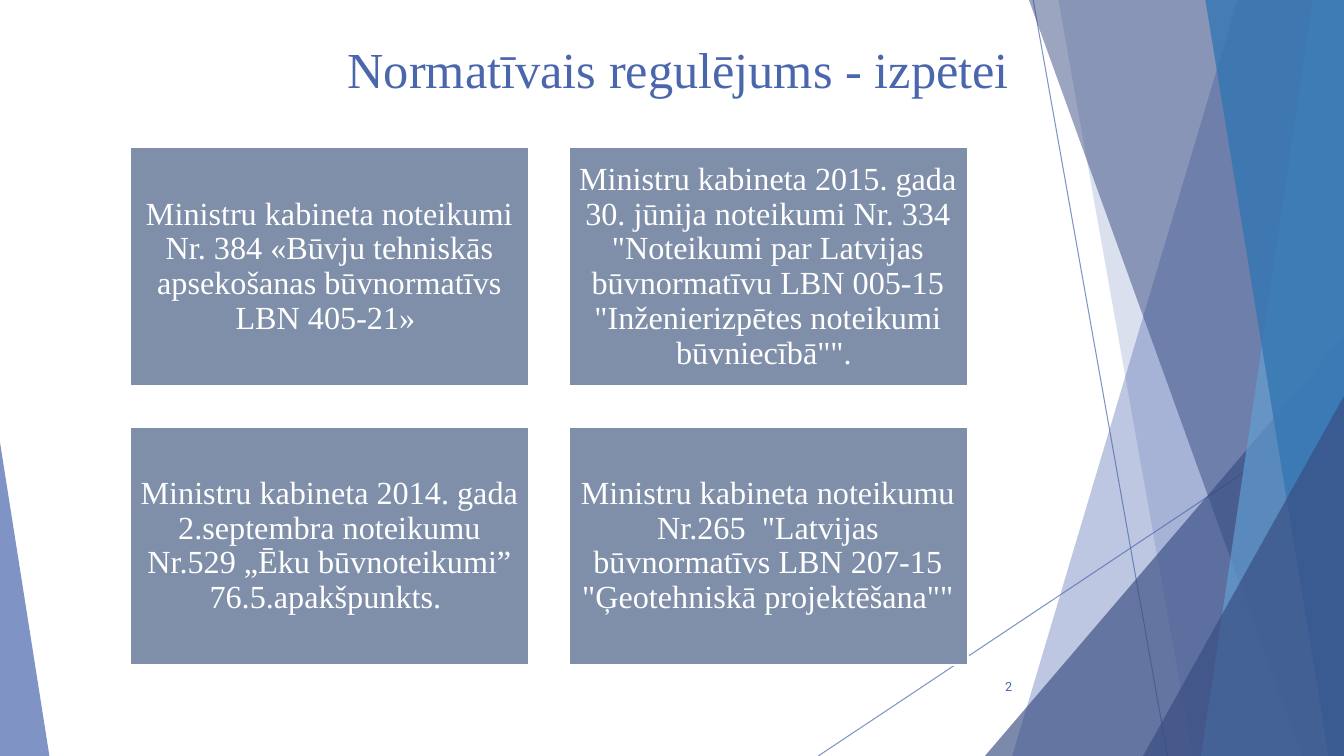
from dataclasses import dataclass
from typing import Any

from lxml import etree
from pptx import Presentation
from pptx import util as u
from pptx.dml import color
from pptx.enum import shapes, text
from pptx.oxml import ns

SLIDE_WIDTH, SLIDE_HEIGHT = 960, 540
COLORS = {
    "blue": "4A66AC",
    "navy": "384C81",
    "sky": "629DD1",
    "ocean": "3477B2",
    "slate": "7F8FA9",
    "white": "FFFFFF",
}
SERIF = "Times New Roman"


@dataclass(frozen=True)
class Ray:
    start: tuple[float, float]
    end: tuple[float, float]


@dataclass(frozen=True)
class Facet:
    top_x: float
    bottom_x: float
    color: str
    opacity: int


@dataclass(frozen=True)
class Triangle:
    left: float
    top: float
    width: float
    apex: float
    color: str
    opacity: int


@dataclass(frozen=True)
class Label:
    words: str
    box: tuple[float, float, float, float]
    size: float
    font: str
    color: str
    alignment: Any
    anchor: Any


RAYS = [Ray((738, 0), (834, 540)), Ray((960, 290), (584.5, 540))]

DECORATIONS = [
    Facet(884, 723, "blue", 36),
    Facet(756, 852, "blue", 20),
    Triangle(703.5, 240, 256.5, 1, "navy", 66),
    Facet(735, 929.5, "navy", 50),
    Facet(938, 858, "sky", 70),
    Facet(861, 949, "ocean", 80),
    Triangle(816.5, 283, 143.5, 1, "navy", 66),
    Triangle(0, 316, 35.3, 0, "blue", 70),
]

LABELS = [
    Label("Normatīvais regulējums - izpētei", (241.2, 23.8, 676.8, 103.7), 36, SERIF,
          "blue", text.PP_ALIGN.LEFT, text.MSO_ANCHOR.TOP),
    Label("2", (676, 476, 54, 28.8), 9, "Roboto",
          "blue", text.PP_ALIGN.RIGHT, text.MSO_ANCHOR.MIDDLE),
]

REGULATIONS = [
    "Ministru kabineta noteikumi Nr. 384 «Būvju tehniskās apsekošanas būvnormatīvs LBN 405-21» ",
    "Ministru kabineta 2015. gada 30. jūnija noteikumi Nr. 334 \"Noteikumi par Latvijas "
    "būvnormatīvu LBN 005-15 \"Inženierizpētes noteikumi būvniecībā\"\". ",
    "Ministru kabineta 2014. gada 2.septembra noteikumu Nr.529 „Ēku būvnoteikumi” "
    "76.5.apakšpunkts. ",
    "Ministru kabineta noteikumu Nr.265  \"Latvijas būvnormatīvs LBN 207-15 "
    "\"Ģeotehniskā projektēšana\"\"",
]
CARD_LEFT, CARD_TOP = 92.9, 105.3
CARD_WIDTH, CARD_HEIGHT = 285.1, 170.6
CARD_STEP_X, CARD_STEP_Y = 313.2, 199.4
CARD_COLUMNS = 2
CARD_INSET = 6.9


def rgb(name: str) -> color.RGBColor:
    return color.RGBColor.from_string(COLORS[name])


def apply_format(target: Any, values: dict[str, Any]) -> None:
    for name, value in values.items():
        setattr(target, name, value)


def paint(fill: Any, name: str) -> None:
    fill.solid()
    fill.fore_color.rgb = rgb(name)


def set_opacity(shape: Any, percent: int) -> None:
    swatch = next(shape._element.spPr.iter(ns.qn("a:srgbClr")))
    etree.SubElement(swatch, ns.qn("a:alpha"), val=str(percent * 1000))


def draw_ray(slide: Any, ray: Ray) -> None:
    points = [u.Pt(value) for value in ray.start + ray.end]
    connector = slide.shapes.add_connector(shapes.MSO_CONNECTOR.STRAIGHT, *points)
    connector.line.width = u.Pt(0.75)
    paint(connector.line.fill, "blue")
    set_opacity(connector, 70)
    etree.SubElement(connector._element.spPr, ns.qn("a:effectLst"))


def draw_decoration(slide: Any, item: Facet | Triangle) -> None:
    if isinstance(item, Facet):
        builder = slide.shapes.build_freeform(item.top_x, 0, scale=u.Pt(1))
        builder.add_line_segments([
            (SLIDE_WIDTH, 0), (SLIDE_WIDTH, SLIDE_HEIGHT), (item.bottom_x, SLIDE_HEIGHT),
        ])
        shape = builder.convert_to_shape()
    else:
        shape = slide.shapes.add_shape(
            shapes.MSO_SHAPE.ISOSCELES_TRIANGLE, u.Pt(item.left), u.Pt(item.top),
            u.Pt(item.width), u.Pt(SLIDE_HEIGHT - item.top))
        shape.adjustments[0] = item.apex
    shape.shadow.inherit = False
    shape.line.fill.background()
    paint(shape.fill, item.color)
    set_opacity(shape, item.opacity)


def write(shape: Any, label: Label) -> None:
    apply_format(shape.text_frame, {"word_wrap": True, "vertical_anchor": label.anchor})
    paragraph = shape.text_frame.paragraphs[0]
    paragraph.alignment = label.alignment
    run = paragraph.add_run()
    run.text = label.words
    apply_format(run.font, {"name": label.font, "size": u.Pt(label.size)})
    run.font.color.rgb = rgb(label.color)


def draw_label(slide: Any, label: Label) -> None:
    write(slide.shapes.add_textbox(*map(u.Pt, label.box)), label)


def draw_card(slide: Any, index: int, words: str) -> None:
    row, column = divmod(index, CARD_COLUMNS)
    box = (CARD_LEFT + column * CARD_STEP_X, CARD_TOP + row * CARD_STEP_Y,
           CARD_WIDTH, CARD_HEIGHT)
    card = slide.shapes.add_shape(shapes.MSO_SHAPE.RECTANGLE, *map(u.Pt, box))
    card.shadow.inherit = False
    paint(card.fill, "slate")
    paint(card.line.fill, "white")
    card.line.width = u.Pt(1.5)
    sides = ("left", "top", "right", "bottom")
    apply_format(card.text_frame, {f"margin_{side}": u.Pt(CARD_INSET) for side in sides})
    write(card, Label(words, box, 23, SERIF, "white",
                      text.PP_ALIGN.CENTER, text.MSO_ANCHOR.MIDDLE))
    card.text_frame.paragraphs[0].line_spacing = 0.9


def main() -> None:
    presentation = Presentation()
    apply_format(presentation, {"slide_width": u.Pt(SLIDE_WIDTH),
                                "slide_height": u.Pt(SLIDE_HEIGHT)})
    slide = presentation.slides.add_slide(presentation.slide_layouts[6])
    for ray in RAYS:
        draw_ray(slide, ray)
    for item in DECORATIONS:
        draw_decoration(slide, item)
    for label in LABELS:
        draw_label(slide, label)
    for index, words in enumerate(REGULATIONS):
        draw_card(slide, index, words)
    presentation.save("out.pptx")


if __name__ == "__main__":
    main()
